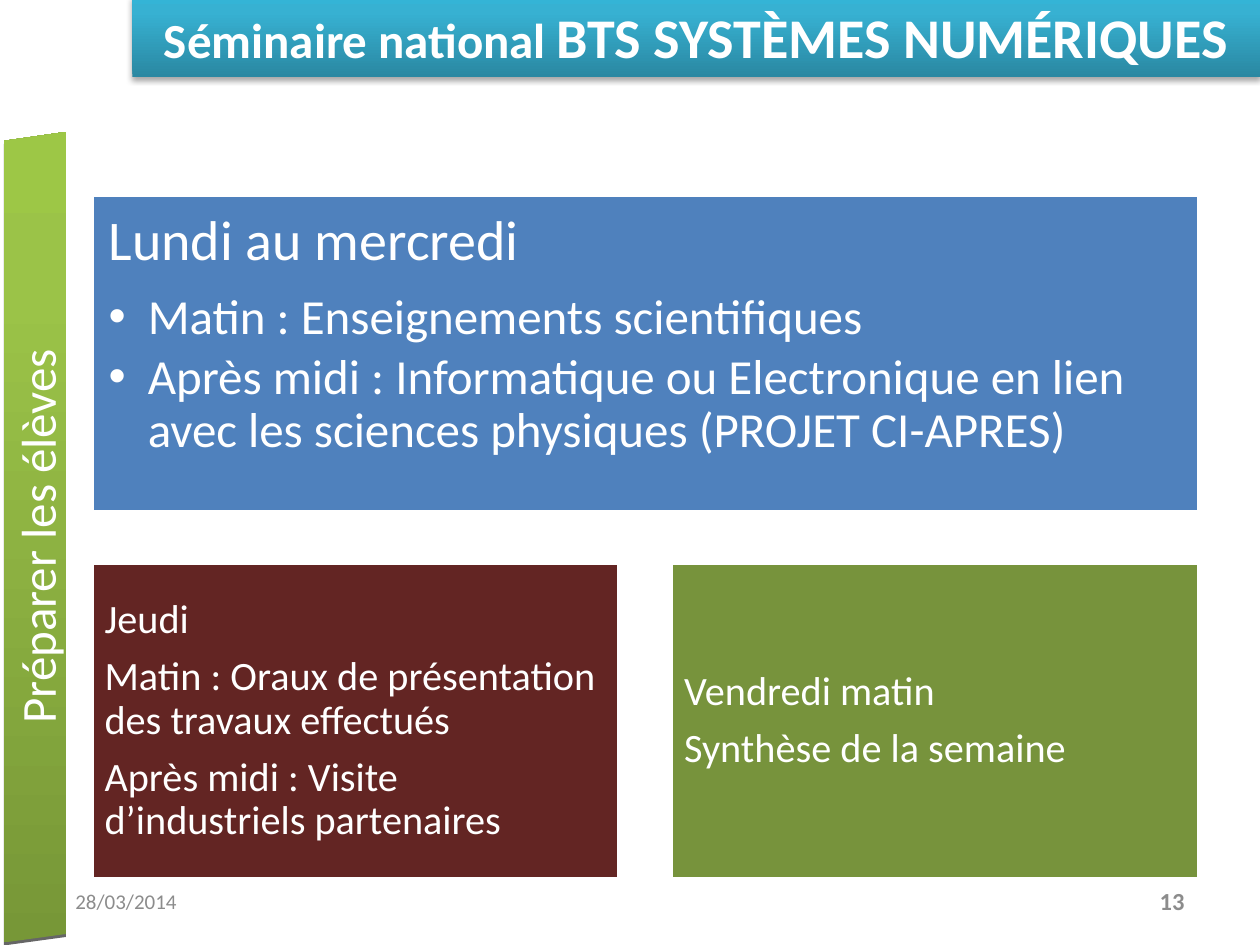
from dataclasses import dataclass

from lxml import etree
from pptx import Presentation
from pptx.dml.color import RGBColor
from pptx.enum.shapes import MSO_SHAPE
from pptx.enum.text import MSO_ANCHOR, MSO_AUTO_SIZE, PP_ALIGN
from pptx.oxml import parse_xml
from pptx.oxml.ns import nsdecls, qn
from pptx.util import Cm, Pt

RECTANGLE = MSO_SHAPE.RECTANGLE
TOP, MIDDLE = MSO_ANCHOR.TOP, MSO_ANCHOR.MIDDLE
LEFT, CENTER, RIGHT = PP_ALIGN.LEFT, PP_ALIGN.CENTER, PP_ALIGN.RIGHT


@dataclass(frozen=True)
class Theme:
    font: str = "Calibri"
    white: str = "FFFFFF"
    grey: str = "8C8C8C"
    edge: str = "666666"
    blue: str = "4F81BD"
    maroon: str = "632523"
    olive: str = "77933C"
    teal_stops: tuple = ((0, "2A88A2"), (80, "37B1D2"), (100, "34B4D6"))
    green_stops: tuple = ((0, "779737"), (80, "9BC348"), (100, "9DC746"))
    heading: int = 32
    text: int = 28
    small: int = 23
    number: int = 14
    date: int = 12


THEME = Theme()

# Grid of the three day panels, in cm
PANEL_LEFT, PANEL_TOP = 1.86, 3.94
PANEL_WIDTH, PANEL_HEIGHT = 22.3, 6.37
LOWER_TOP, LOWER_WIDTH = 11.35, 10.62


def style(run, size, color=THEME.white, bold=False):
    run.font.name = THEME.font
    run.font.size = Pt(size)
    run.font.bold = bold
    run.font.color.rgb = RGBColor.from_string(color)


def set_frame(frame, inset, anchor):
    frame.word_wrap = True
    frame.auto_size = MSO_AUTO_SIZE.NONE
    frame.vertical_anchor = anchor
    frame.margin_left = frame.margin_right = Cm(inset)
    frame.margin_top = frame.margin_bottom = Cm(inset)


def place(shape, left, top, width, height):
    shape.left, shape.top = Cm(left), Cm(top)
    shape.width, shape.height = Cm(width), Cm(height)


def fill_gradient(shape, stops):
    """Fill from bottom to top."""
    shape.fill.background()
    stop_xml = "".join(
        f'<a:gs pos="{pos * 1000}"><a:srgbClr val="{color}"/></a:gs>'
        for pos, color in stops)
    gradient = parse_xml(
        f'<a:gradFill {nsdecls("a")} rotWithShape="1"><a:gsLst>{stop_xml}</a:gsLst>'
        '<a:lin ang="16200000" scaled="0"/></a:gradFill>')
    properties = shape.element.spPr
    properties.replace(properties.find(qn("a:noFill")), gradient)
    shape.line.fill.background()


def add_shadow(shape):
    shape.shadow.inherit = False
    effects = shape.element.spPr.find(qn("a:effectLst"))
    effects.append(parse_xml(
        f'<a:outerShdw {nsdecls("a")} blurRad="39370" dist="22860" dir="5400000" '
        'rotWithShape="0"><a:srgbClr val="000000"><a:alpha val="35000"/>'
        '</a:srgbClr></a:outerShdw>'))


def fill_panel(panel, color):
    panel.fill.solid()
    panel.fill.fore_color.rgb = RGBColor.from_string(color)
    panel.line.color.rgb = RGBColor.from_string(THEME.white)
    panel.line.width = Pt(2)


def set_bullet(paragraph, char=None, indent=0):
    properties = paragraph._p.get_or_add_pPr()
    properties.set("marL", str(Cm(indent)))
    properties.set("indent", str(-Cm(indent)))
    bullet = etree.SubElement(properties, qn("a:buChar" if char else "a:buNone"))
    if char:
        bullet.set("char", char)


def write_lines(frame, lines, size, after):
    frame.text = "\n".join(lines)
    for paragraph in frame.paragraphs:
        paragraph.alignment = LEFT
        paragraph.line_spacing = 0.9
        paragraph.space_before = Pt(0)
        paragraph.space_after = Pt(after)
        style(paragraph.runs[0], size)


def add_banner(slide):
    banner = slide.shapes.add_shape(RECTANGLE, Cm(2.67), Cm(-0.08), Cm(22.73), Cm(1.63))
    fill_gradient(banner, THEME.teal_stops)
    add_shadow(banner)
    set_frame(banner.text_frame, 0.13, TOP)
    paragraph = banner.text_frame.paragraphs[0]
    paragraph.alignment = CENTER
    for words, size in (("Séminaire national ", THEME.text),
                        ("BTS SYSTÈMES NUMÉRIQUES", THEME.heading)):
        run = paragraph.add_run()
        run.text = words
        style(run, size, bold=True)


def add_band(slide, drop):
    """Slanted side band, placed behind everything else."""
    corners = [(Cm(x), Cm(y + drop)) for x, y in
               ((0.08, 2.84), (1.33, 2.66), (1.33, 18.83), (0.08, 19.0))]
    outline = slide.shapes.build_freeform(*corners[0])
    outline.add_line_segments(corners[1:], close=True)
    band = outline.convert_to_shape()
    band.shadow.inherit = False
    band.line.fill.background()
    band.element.getparent().insert(2, band.element)
    return band


def set_side_title(slide):
    fill_gradient(add_band(slide, 0), THEME.green_stops)
    edge = add_band(slide, 0.06)
    edge.fill.solid()
    edge.fill.fore_color.rgb = RGBColor.from_string(THEME.edge)

    # A quarter turn about the centre of the band
    title = slide.shapes.title
    center_x, center_y, length, thickness = 0.73, 10.81, 16, 1.2
    place(title, center_x - length / 2, center_y - thickness / 2, length, thickness)
    title.rotation = 270
    set_frame(title.text_frame, 0, MIDDLE)
    title.text_frame.text = "Préparer les élèves"
    paragraph = title.text_frame.paragraphs[0]
    paragraph.alignment = CENTER
    style(paragraph.runs[0], THEME.text)


def set_main_panel(panel, heading, items):
    place(panel, PANEL_LEFT, PANEL_TOP, PANEL_WIDTH, PANEL_HEIGHT)
    fill_panel(panel, THEME.blue)
    set_frame(panel.text_frame, 0.33, TOP)
    write_lines(panel.text_frame, [heading, *items], THEME.text, after=4.2)
    first, *rest = panel.text_frame.paragraphs
    set_bullet(first)
    first.space_after = Pt(11.2)
    style(first.runs[0], THEME.heading)
    for paragraph in rest:
        paragraph.level = 1
        set_bullet(paragraph, "•", 0.79)


def add_day_panel(slide, left, color, lines):
    panel = slide.shapes.add_shape(
        RECTANGLE, Cm(left), Cm(LOWER_TOP), Cm(LOWER_WIDTH), Cm(PANEL_HEIGHT))
    panel.shadow.inherit = False
    fill_panel(panel, color)
    set_frame(panel.text_frame, 0.25, MIDDLE)
    write_lines(panel.text_frame, lines, THEME.small, after=8)


def add_footer(slide, left, words, size, align, bold=False):
    footer = slide.shapes.add_textbox(Cm(left), Cm(17.65), Cm(5.92), Cm(1.02))
    set_frame(footer.text_frame, 0.25, MIDDLE)
    footer.text_frame.text = words
    paragraph = footer.text_frame.paragraphs[0]
    paragraph.alignment = align
    style(paragraph.runs[0], size, THEME.grey, bold)


def main():
    deck = Presentation()
    deck.slide_width, deck.slide_height = Cm(25.4), Cm(19.05)
    slide = deck.slides.add_slide(deck.slide_layouts[1])

    # Header and side title
    add_banner(slide)
    set_side_title(slide)

    # Week programme
    set_main_panel(slide.placeholders[1], "Lundi au mercredi", [
        "Matin : Enseignements scientifiques",
        "Après midi : Informatique ou Electronique en lien avec les sciences "
        "physiques (PROJET CI-APRES)"])
    add_day_panel(slide, PANEL_LEFT, THEME.maroon, [
        "Jeudi",
        "Matin : Oraux de présentation des travaux effectués",
        "Après midi : Visite d’industriels partenaires"])
    add_day_panel(slide, PANEL_LEFT + PANEL_WIDTH - LOWER_WIDTH, THEME.olive, [
        "Vendredi matin", "Synthèse de la semaine"])

    # Footer
    add_footer(slide, 1.27, "28/03/2014", THEME.date, LEFT)
    add_footer(slide, 18.21, "13", THEME.number, RIGHT, bold=True)

    deck.save("out.pptx")


if __name__ == "__main__":
    main()
